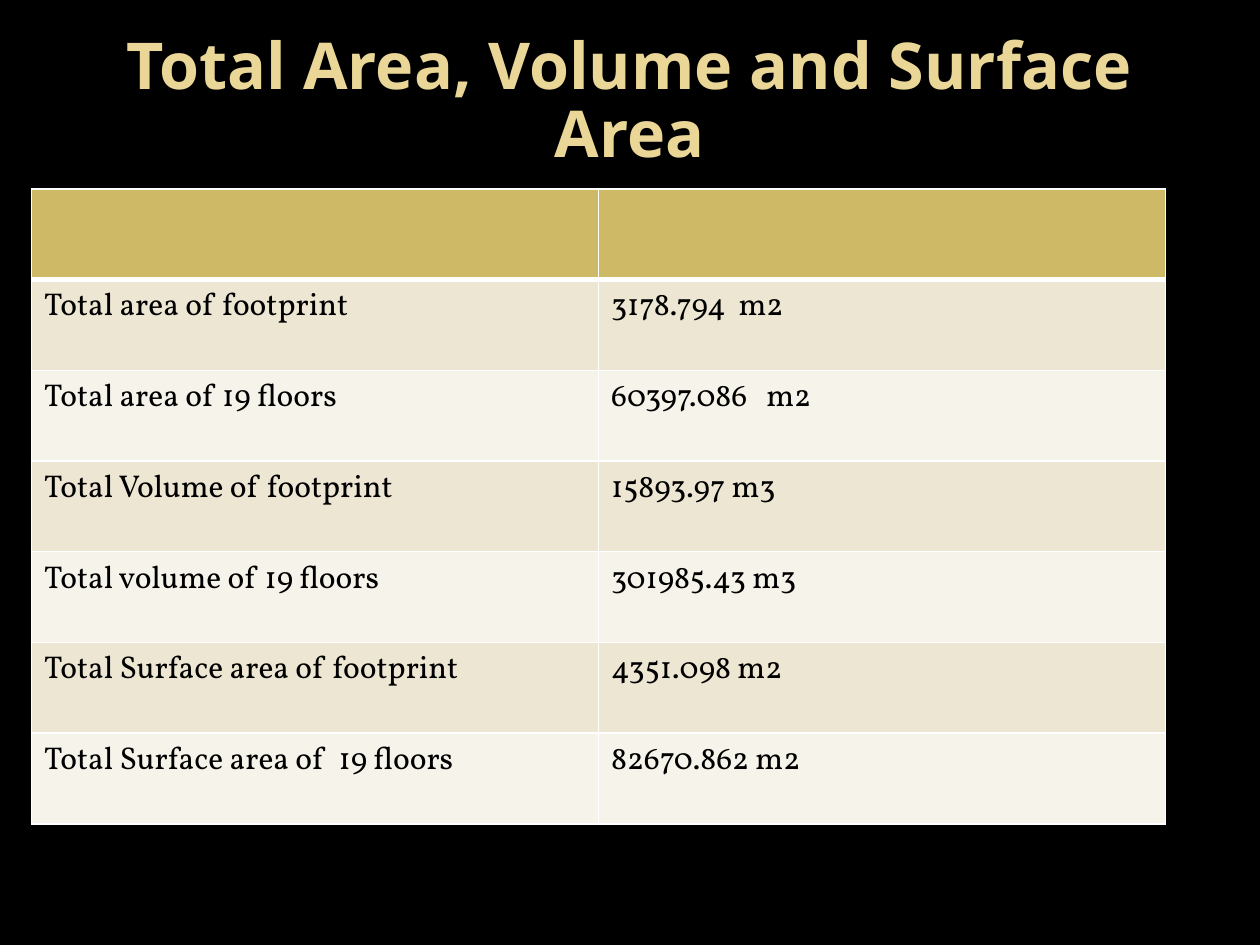
from dataclasses import dataclass

import pptx
import pptx.dml.color
import pptx.enum.text
import pptx.oxml
import pptx.oxml.ns
import pptx.util
from pptx.util import Inches

COLORS = {
    "background": "000000",
    "title": "EAD696",
    "header": "CEB966",
    "odd_row": "EDE6D3",
    "even_row": "F6F3EA",
    "text": "000000",
    "border": "FFFFFF",
}
TITLE_FORMAT = {"name": "Open Sans", "size": pptx.util.Pt(36.9), "bold": True}
CELL_FORMAT = {"name": "Vollkorn", "size": pptx.util.Pt(18), "bold": False}
COLUMN_WIDTH = Inches(4.5)
ROW_HEIGHT = Inches(0.72)


@dataclass
class Measure:
    label: str
    value: str


MEASURES = [
    Measure("Total area of footprint", "3178.794  m2"),
    Measure("Total area of 19 floors", "60397.086   m2"),
    Measure("Total Volume of footprint", "15893.97 m3"),
    Measure("Total volume of 19 floors", "301985.43 m3"),
    Measure("Total Surface area of footprint", "4351.098 m2"),
    Measure("Total Surface area of  19 floors", "82670.862 m2"),
]


def rgb(name: str) -> pptx.dml.color.RGBColor:
    return pptx.dml.color.RGBColor.from_string(COLORS[name])


def format_font(font, values: dict, color: str) -> None:
    for attribute, value in values.items():
        setattr(font, attribute, value)
    font.color.rgb = rgb(color)


def add_borders(cell, widths: dict[str, int]) -> None:
    """Draw the cell's borders; widths are in points."""
    properties = cell._tc.get_or_add_tcPr()
    for side, width in widths.items():
        properties.append(pptx.oxml.parse_xml(
            f'<a:ln{side} {pptx.oxml.ns.nsdecls("a")} w="{pptx.util.Pt(width)}">'
            f'<a:solidFill><a:srgbClr val="{COLORS["border"]}"/></a:solidFill>'
            f'</a:ln{side}>'
        ))


def fill_cell(cell, text: str, fill: str, top: int, bottom: int) -> None:
    add_borders(cell, {"L": 1, "R": 1, "T": top, "B": bottom})
    cell.fill.solid()
    cell.fill.fore_color.rgb = rgb(fill)
    paragraph = cell.text_frame.paragraphs[0]
    format_font(paragraph.font, CELL_FORMAT, "text")
    if text:
        run = paragraph.add_run()
        run.text = text
        format_font(run.font, CELL_FORMAT, "text")


def add_title(slide, text: str) -> None:
    title = slide.shapes.title
    position = {"left": 0.5, "top": 0.08, "width": 9, "height": 1.47}
    for attribute, value in position.items():
        setattr(title, attribute, Inches(value))
    frame = title.text_frame
    frame.text = text
    frame.word_wrap = True
    frame.auto_size = pptx.enum.text.MSO_AUTO_SIZE.NONE
    frame.vertical_anchor = pptx.enum.text.MSO_ANCHOR.MIDDLE
    paragraph = frame.paragraphs[0]
    paragraph.alignment = pptx.enum.text.PP_ALIGN.CENTER
    paragraph.line_spacing = 0.88
    format_font(paragraph.runs[0].font, TITLE_FORMAT, "title")


def add_measure_table(slide, measures: list[Measure]) -> None:
    rows = [Measure("", ""), *measures]
    table = slide.shapes.add_table(
        len(rows), 2, Inches(0.25), Inches(1.5),
        2 * COLUMN_WIDTH, len(rows) * ROW_HEIGHT,
    ).table
    for index, measure in enumerate(rows):
        # A thick rule separates the header from the banded rows
        fill = "header" if index == 0 else ("even_row", "odd_row")[index % 2]
        top = 3 if index == 1 else 1
        bottom = 3 if index == 0 else 1
        for column, text in enumerate((measure.label, measure.value)):
            fill_cell(table.cell(index, column), text, fill, top, bottom)


def main() -> None:
    presentation = pptx.Presentation()
    presentation.slide_width = Inches(10)
    presentation.slide_height = Inches(7.5)

    # Title-only slide on a dark background
    slide = presentation.slides.add_slide(presentation.slide_layouts[5])
    slide.background.fill.solid()
    slide.background.fill.fore_color.rgb = rgb("background")

    add_title(slide, "Total Area, Volume and Surface Area")
    add_measure_table(slide, MEASURES)
    presentation.save("out.pptx")


if __name__ == "__main__":
    main()
